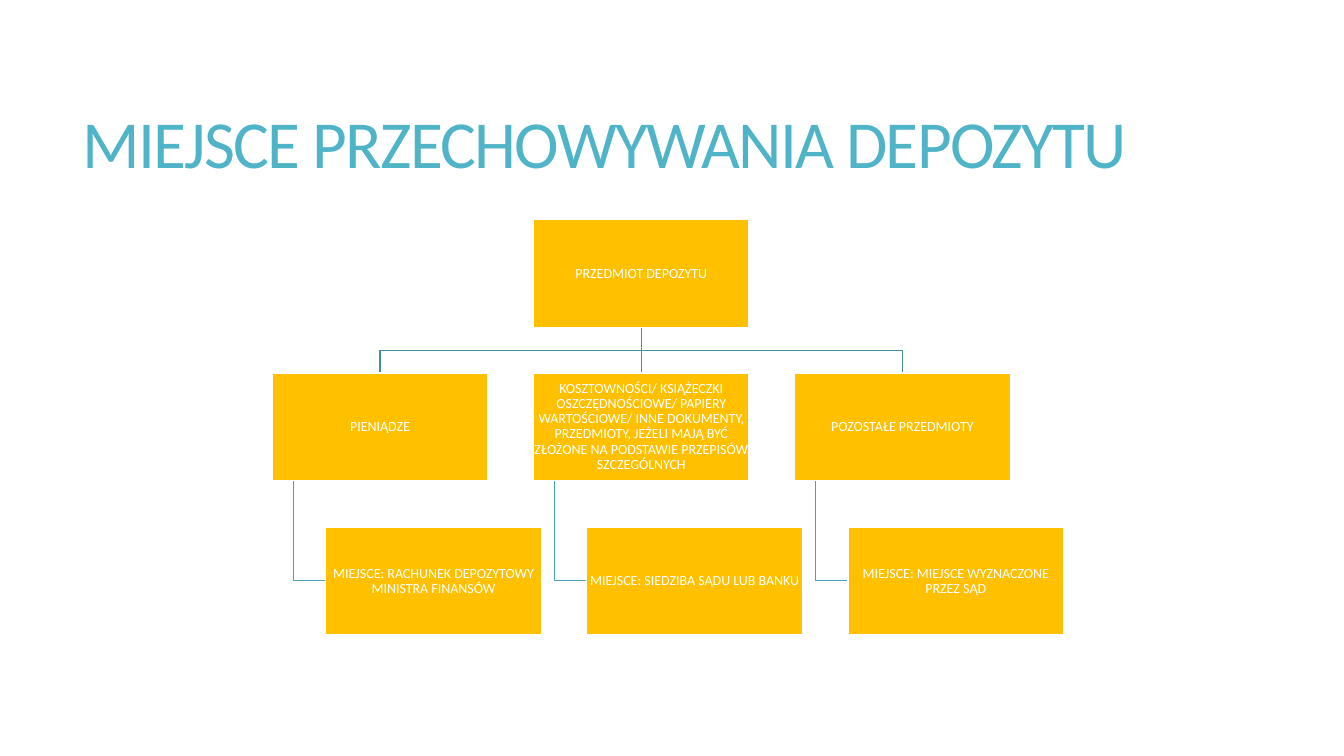
from lxml.etree import SubElement
from pptx import Presentation
from pptx.dml.color import RGBColor
from pptx.enum.shapes import MSO_CONNECTOR, MSO_SHAPE
from pptx.enum.text import MSO_ANCHOR, PP_ALIGN
from pptx.oxml.ns import qn
from pptx.util import Pt

PX = 9144  # EMU per px, 100 px to the inch
FONT = "Calibri"
WHITE = RGBColor(0xFF, 0xFF, 0xFF)
AMBER = RGBColor(0xFF, 0xC0, 0x00)
TITLE_TEAL = RGBColor(0x50, 0xB4, 0xC8)
BRANCH_TEAL = RGBColor(0x40, 0x90, 0xA0)
PLACE_TEAL = RGBColor(0x49, 0xA3, 0xB6)

BOX_WIDTH, BOX_HEIGHT = 214, 107
ROOT_TOP, ITEM_TOP, PLACE_TOP = 218, 370, 523
FIRST_LEFT, COLUMN_STEP = 270, 259
PLACE_INDENT, HANGER_INDENT = 53, 21

ROOT = "PRZEDMIOT DEPOZYTU"
BRANCHES = [
    ("PIENIĄDZE", "MIEJSCE: RACHUNEK DEPOZYTOWY MINISTRA FINANSÓW"),
    ("KOSZTOWNOŚCI/ KSIĄŻECZKI OSZCZĘDNOŚCIOWE/ PAPIERY WARTOŚCIOWE/ "
     "INNE DOKUMENTY, PRZEDMIOTY, JEŻELI MAJĄ BYĆ ZŁOŻONE NA PODSTAWIE "
     "PRZEPISÓW SZCZEGÓLNYCH", "MIEJSCE: SIEDZIBA SĄDU LUB BANKU"),
    ("POZOSTAŁE PRZEDMIOTY", "MIEJSCE: MIEJSCE WYZNACZONE PRZEZ SĄD"),
]


def write_text(shape, text, size, color):
    """Fill the shape with one middle-anchored paragraph and return it."""
    frame = shape.text_frame
    frame.word_wrap = True
    frame.vertical_anchor = MSO_ANCHOR.MIDDLE
    para = frame.paragraphs[0]
    para.text = text
    para.line_spacing = 0.9
    para.font.name = FONT
    para.font.size = Pt(size)
    para.font.color.rgb = color
    return para


def add_title(page, text):
    box = page.shapes.add_textbox(72 * PX, 55 * PX, 1178 * PX, 181 * PX)
    para = write_text(box, text, 48, TITLE_TEAL)
    para.runs[0]._r.get_or_add_rPr().set("spc", "-120")


def add_box(page, left, top, text):
    box = page.shapes.add_shape(MSO_SHAPE.RECTANGLE, left * PX, top * PX,
                                BOX_WIDTH * PX, BOX_HEIGHT * PX)
    box.shadow.inherit = False
    box.fill.solid()
    box.fill.fore_color.rgb = AMBER
    box.line.color.rgb = WHITE
    box.line.width = Pt(1)
    frame = box.text_frame
    frame.margin_left = frame.margin_right = PX
    frame.margin_top = frame.margin_bottom = PX
    write_text(box, text, 10, WHITE).alignment = PP_ALIGN.CENTER


def add_bent_line(page, points, color):
    builder = page.shapes.build_freeform(*points[0], scale=PX)
    builder.add_line_segments(points[1:], close=False)
    bend = builder.convert_to_shape()
    bend.shadow.inherit = False
    bend.fill.background()
    bend.line.color.rgb = color
    bend.line.width = Pt(1)


def add_straight_line(page, start, end, color):
    ends = [value * PX for value in (*start, *end)]
    line = page.shapes.add_connector(MSO_CONNECTOR.STRAIGHT, *ends)
    line.line.color.rgb = color
    line.line.width = Pt(1)
    SubElement(line._element.spPr, qn("a:effectLst"))


def add_branch_line(page, root_left, item_left):
    """Join the root box to the top of one item box."""
    root_x = root_left + BOX_WIDTH // 2
    item_x = item_left + BOX_WIDTH // 2
    start, end = (root_x, ROOT_TOP + BOX_HEIGHT), (item_x, ITEM_TOP)
    if root_x == item_x:
        add_straight_line(page, start, end, BRANCH_TEAL)
    else:
        middle = (start[1] + ITEM_TOP) // 2 + 1
        add_bent_line(page, [start, (root_x, middle), (item_x, middle), end],
                      BRANCH_TEAL)


def add_hanger(page, item_left):
    """Join an item box to the side of the place box below it."""
    x = item_left + HANGER_INDENT
    place_middle = PLACE_TOP + BOX_HEIGHT // 2
    add_bent_line(page, [(x, ITEM_TOP + BOX_HEIGHT), (x, place_middle),
                         (item_left + PLACE_INDENT, place_middle)], PLACE_TEAL)


def main():
    deck = Presentation()
    deck.slide_width, deck.slide_height = 1333 * PX, 750 * PX
    page = deck.slides.add_slide(deck.slide_layouts[6])
    add_title(page, "MIEJSCE PRZECHOWYWANIA DEPOZYTU")

    lefts = [FIRST_LEFT + column * COLUMN_STEP for column in range(len(BRANCHES))]
    root_left = lefts[1]
    for left in lefts:
        add_branch_line(page, root_left, left)
        add_hanger(page, left)

    add_box(page, root_left, ROOT_TOP, ROOT)
    for left, (item, place) in zip(lefts, BRANCHES):
        add_box(page, left, ITEM_TOP, item)
        add_box(page, left + PLACE_INDENT, PLACE_TOP, place)
    deck.save("out.pptx")


if __name__ == "__main__":
    main()
